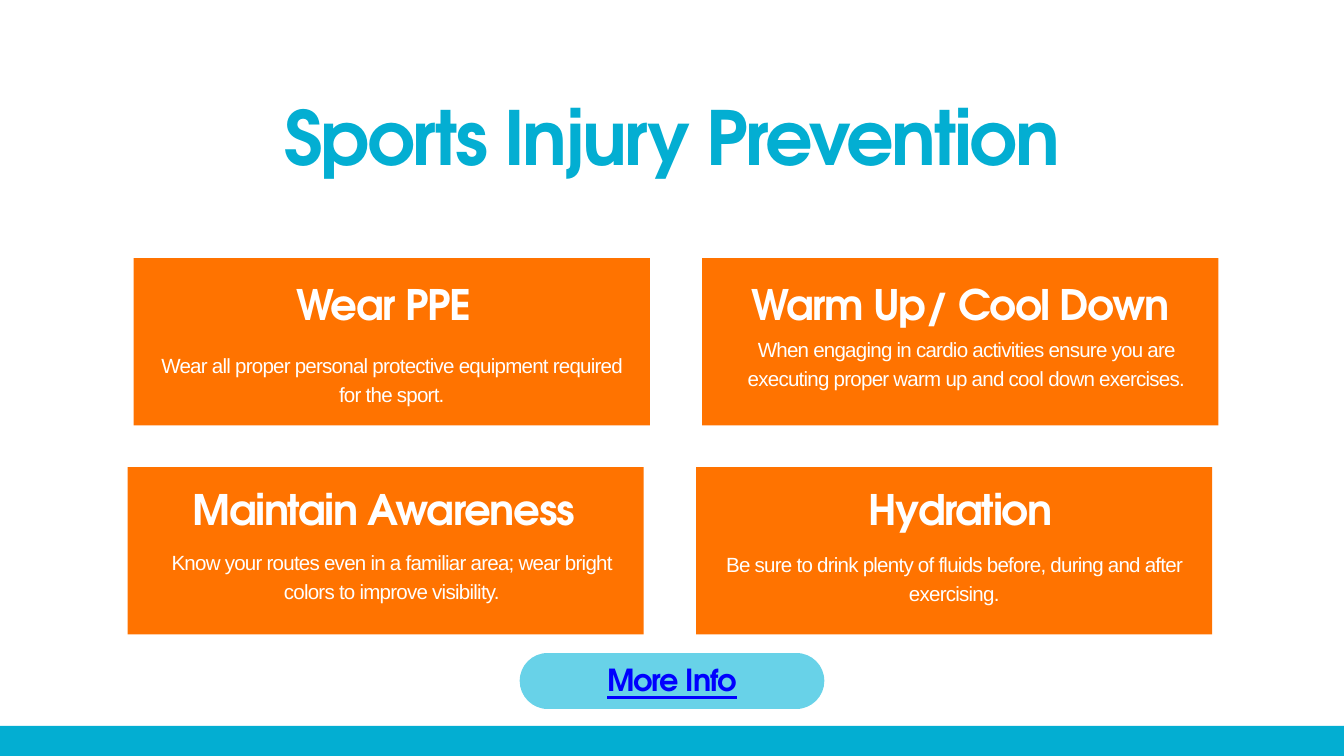
import pptx
import pptx.dml.color
import pptx.enum.shapes
import pptx.enum.text
import pptx.util
from lxml import etree

SLIDE_WIDTH, SLIDE_HEIGHT = 20, 11.25
HEADING_FONT, BODY_FONT = "TeX Gyre Adventor", "Arial"
ORANGE, TEAL, AQUA, WHITE, LINK_BLUE = "FF7300", "03AED2", "68D2E8", "FFFFFF", "0000FF"

# Card grid: the lower row sits slightly to the left of the upper one
CARD_WIDTH, CARD_HEIGHT = 7.68, 2.49
CARD_LEFT, CARD_TOP = 1.99, 3.84
COLUMN_STEP, ROW_STEP, ROW_SHIFT = 8.46, 3.11, -0.09

# Heading grid
HEADING_LEFT, HEADING_TOP = 2.31, 4.02
HEADING_COLUMN_STEP, HEADING_ROW_STEP = 8.58, 3.05

# Column, row, heading, body text, body left, top and width
CARDS = [
    (0, 0, "Wear PPE",
     "Wear all proper personal protective equipment required for the sport.",
     2.35, 5.19, 6.96),
    (1, 0, "Warm Up/ Cool Down",
     "When engaging in cardio activities ensure you are executing proper "
     "warm up and cool down exercises.",
     11.07, 4.95, 6.62),
    (0, 1, "Maintain Awareness",
     "Know your routes even in a familiar area; wear bright colors to "
     "improve visibility.",
     2.35, 8.13, 6.96),
    (1, 1, "Hydration",
     "Be sure to drink plenty of fluids before, during and after exercising.",
     10.68, 8.15, 7.04),
]


def inches(*lengths):
    return [pptx.util.Inches(length) for length in lengths]


def color(hex_string):
    return pptx.dml.color.RGBColor.from_string(hex_string)


def add_block(slide, left, top, width, height, fill):
    shape = slide.shapes.add_shape(
        pptx.enum.shapes.MSO_SHAPE.RECTANGLE, *inches(left, top, width, height))
    shape.shadow.inherit = False
    shape.fill.solid()
    shape.fill.fore_color.rgb = color(fill)
    shape.line.fill.background()


def add_text(slide, left, top, width, height, text, size, leading, spacing,
             fill, font=HEADING_FONT, underline=False):
    box = slide.shapes.add_textbox(*inches(left, top, width, height))
    frame = box.text_frame
    frame.word_wrap = True
    frame.margin_left = frame.margin_right = 0
    frame.margin_top = frame.margin_bottom = 0
    paragraph = frame.paragraphs[0]
    paragraph.alignment = pptx.enum.text.PP_ALIGN.CENTER
    paragraph.line_spacing = pptx.util.Pt(leading)
    run = paragraph.add_run()
    run.text = text
    run.font.name = font
    run.font.size = pptx.util.Pt(size)
    run.font.bold = font == HEADING_FONT
    run.font.underline = underline
    run.font.color.rgb = color(fill)
    # Letter spacing is stored in hundredths of a point
    run._r.get_or_add_rPr().set("spc", str(round(spacing * 100)))


def add_pill(slide, left, right, middle, thickness, fill):
    """A thick line with round ends serves as the button."""
    connector = slide.shapes.add_connector(
        pptx.enum.shapes.MSO_CONNECTOR.STRAIGHT,
        *inches(left, middle, right, middle))
    connector.line.color.rgb = color(fill)
    connector.line.width = pptx.util.Pt(thickness)
    connector.line._get_or_add_ln().set("cap", "rnd")
    properties = connector._element.spPr
    etree.SubElement(properties, pptx.oxml.ns.qn("a:effectLst"))


def add_card(slide, column, row, heading, body, body_left, body_top, body_width):
    add_block(slide, CARD_LEFT + column * COLUMN_STEP + row * ROW_SHIFT,
              CARD_TOP + row * ROW_STEP, CARD_WIDTH, CARD_HEIGHT, ORANGE)
    add_text(slide, HEADING_LEFT + column * HEADING_COLUMN_STEP,
             HEADING_TOP + row * HEADING_ROW_STEP, 6.8, 0.94,
             heading, 45, 63, -1.5, WHITE)
    add_text(slide, body_left, body_top, body_width, 0.83,
             body, 22, 30.8, -0.8, WHITE, font=BODY_FONT)


def main():
    presentation = pptx.Presentation()
    presentation.slide_width, presentation.slide_height = inches(
        SLIDE_WIDTH, SLIDE_HEIGHT)
    slide = presentation.slides.add_slide(presentation.slide_layouts[6])

    # Title
    add_text(slide, 2.98, 1.57, 14.04, 1.34, "Sports Injury Prevention",
             80, 80, -2.6, TEAL)

    # Advice cards
    for card in CARDS:
        add_card(slide, *card)

    # Footer band
    footer_height = SLIDE_HEIGHT * 0.04
    add_block(slide, 0, SLIDE_HEIGHT - footer_height, SLIDE_WIDTH,
              footer_height, TEAL)

    # Button
    center = SLIDE_WIDTH / 2
    add_pill(slide, center - 1.85, center + 1.85, 10.13, 60, AQUA)
    add_text(slide, center - 1.6, 9.75, 3.2, 0.62, "More Info",
             32.5, 45.5, -1.1, LINK_BLUE, underline=True)

    presentation.save("out.pptx")


if __name__ == "__main__":
    main()
